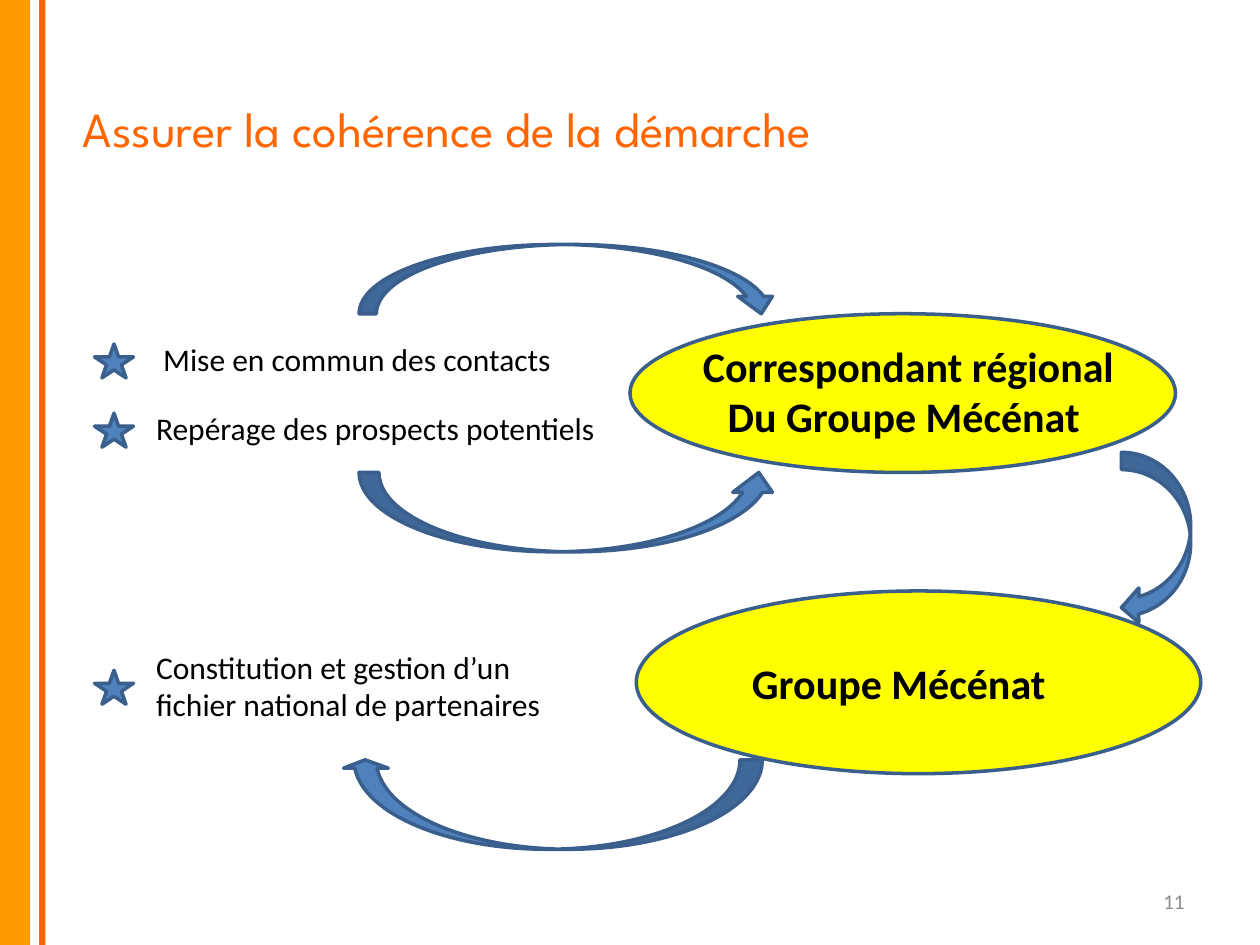
"""Build the slide on keeping the sponsorship approach consistent."""
from pptx import Presentation
from pptx.dml.color import RGBColor
from pptx.enum import shapes, text
from pptx.util import Inches, Pt

COLORS = {"amber": "FF9900", "orange": "FF6600", "yellow": "FFFF00", "blue": "4F81BD",
          "outline": "3A5F8C", "black": "000000", "gray": "8C8C8C"}
KIND = shapes.MSO_SHAPE
ALIGN = text.PP_ALIGN

deck = Presentation()
deck.slide_width, deck.slide_height = Inches(10), Inches(7.5)
slide = deck.slides.add_slide(deck.slide_layouts[6])


def draw(kind, box, fill, outline="outline"):
    figure = slide.shapes.add_shape(kind, *map(Inches, box))
    figure.shadow.inherit = False
    figure.fill.solid()
    figure.fill.fore_color.rgb = RGBColor.from_string(COLORS[fill])
    if outline:
        figure.line.color.rgb = RGBColor.from_string(COLORS[outline])
        figure.line.width = Pt(2)
    else:
        figure.line.fill.background()
    return figure


def write(lines, box, size, color="black", align=ALIGN.LEFT, wrap=True, **font):
    frame = slide.shapes.add_textbox(*map(Inches, box)).text_frame
    frame.word_wrap = wrap
    frame.text = lines
    style = {"name": "Calibri", "size": Pt(size), **font}
    for paragraph in frame.paragraphs:
        paragraph.alignment = align
        for run in paragraph.runs:
            run.font.color.rgb = RGBColor.from_string(COLORS[color])
            for attribute, value in style.items():
                setattr(run.font, attribute, value)
    return frame


for left, width, color in [(0, 0.24, "amber"), (0.31, 0.05, "orange")]:
    draw(KIND.RECTANGLE, (left, 0, width, 7.5), color, None)

for box in [(5.05, 4.69, 4.48, 1.45), (5, 2.49, 4.33, 1.26)]:
    draw(KIND.OVAL, box, "yellow")

for top in (2.73, 3.28, 5.32):
    draw(KIND.STAR_5_POINT, (0.75, top, 0.31, 0.27), "blue")

flows = [
    (KIND.CURVED_DOWN_ARROW, (2.85, 1.94, 3.33, 0.55), 0, 0.25),
    (KIND.CURVED_UP_ARROW, (2.85, 3.75, 3.33, 0.63), 0, 0.25),
    (KIND.CURVED_DOWN_ARROW, (2.72, 6.03, 3.33, 0.71), 180, 0.093),
    (KIND.CURVED_DOWN_ARROW, (8.49, 4, 1.37, 0.55), 90, 0.25),
]
for kind, box, rotation, head in flows:
    flow = draw(kind, box, "blue")
    flow.rotation = rotation
    flow.adjustments[2] = head

write("Assurer la cohérence de la démarche", (0.56, 0.73, 8.62, 0.57), 28, "orange",
      name="League Spartan")
write("Correspondant régional\nDu Groupe Mécénat ", (5.24, 2.65, 3.94, 0.91), 24,
      align=ALIGN.CENTER, bold=True)
write("Groupe Mécénat", (5.87, 5.17, 2.83, 0.5), 24, bold=True)

write(" Mise en commun des contacts", (1.14, 2.65, 3.86, 0.4), 18)
write("Repérage des prospects potentiels", (1.14, 3.2, 3.72, 0.4), 18, wrap=False)
write("Constitution et gestion d’un fichier national de partenaires",
      (1.14, 5.09, 3.7, 0.71), 18)

page_number = write("11", (7.17, 6.95, 2.33, 0.4), 12, "gray", ALIGN.RIGHT)
page_number.vertical_anchor = text.MSO_ANCHOR.MIDDLE

deck.save("out.pptx")
